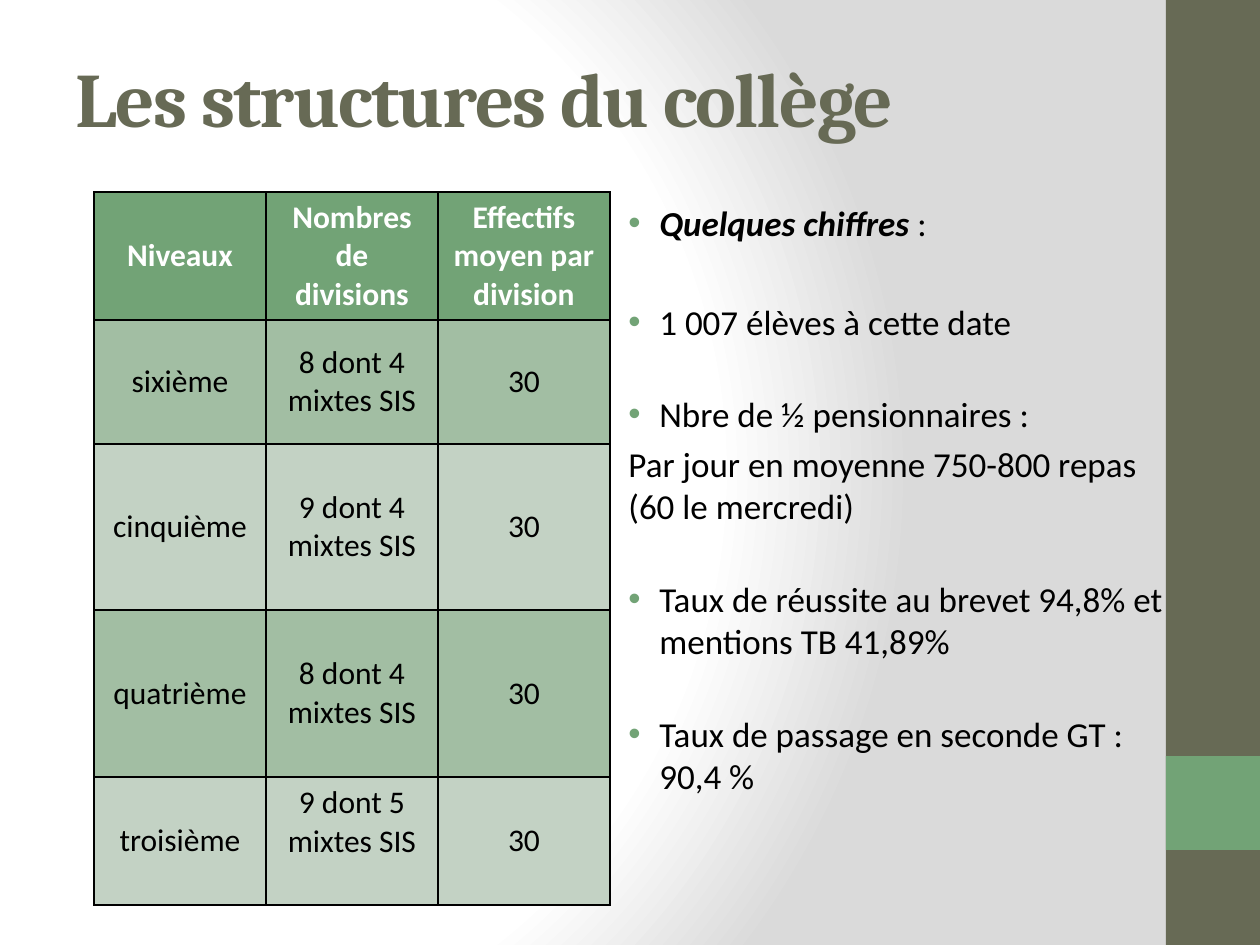
from lxml import etree
from pptx import Presentation, util as u
from pptx.dml.color import RGBColor
from pptx.enum import shapes, text
from pptx.oxml import parse_xml
from pptx.oxml.ns import nsdecls, qn

C = {"olive": "676A55", "green": "72A376", "band": "A2BEA3", "pale": "C3D2C4",
     "black": "000000", "white": "FFFFFF", "grey": "DADADA"}

TITLE = "Les structures du collège"
ROWS = [
    ("Niveaux", "Nombres de divisions", "Effectifs moyen par division"),
    ("sixième", "8 dont 4 mixtes SIS", "30"),
    ("cinquième", "9 dont 4 mixtes SIS", "30"),
    ("quatrième", "8 dont 4 mixtes SIS", "30"),
    ("troisième", "9 dont 5 mixtes SIS", "30"),
]
ROW_HEIGHTS = [128, 124, 166, 167, 128]
COL_WIDTH = 172

# runs (text, emphasised), bulleted, space before in points
FACTS = [
    ([("Quelques chiffres ", True), (":", False)], True, 0),
    ([("1 007 élèves à cette date", False)], True, 32.5),
    ([("Nbre de ½ pensionnaires :", False)], True, 29),
    ([("Par jour en moyenne 750-800 repas (60 le mercredi)", False)], False, 4.5),
    ([("Taux de réussite au brevet 94,8% et mentions TB 41,89%", False)], True, 29),
    ([("Taux de passage en seconde GT : 90,4 %", False)], True, 29),
]
SIDEBAR = [((1166, 0, 94, 945), "olive"), ((1166, 756, 94, 94), "green")]


def px(n):
    return u.Emu(round(n * 914400 / 126))


def rgb(name):
    return RGBColor.from_string(C[name])


def style(r, size, color, bold=False, italic=False, name="Calibri"):
    f = r.font
    f.name, f.size, f.bold, f.italic = name, u.Pt(size), bold, italic
    f.color.rgb = rgb(color)


def set_background(s):
    """Circular gradient, white at the left fading to grey."""
    s.background.fill.solid()
    solid = s.background._cSld.find(".//" + qn("a:solidFill"))
    stops = "".join(
        f'<a:gs pos="{pos * 1000}"><a:srgbClr val="{C[c]}"/></a:gs>'
        for pos, c in [(0, "white"), (75, "white"), (100, "grey")])
    solid.getparent().replace(solid, parse_xml(
        f'<a:gradFill {nsdecls("a")} rotWithShape="1"><a:gsLst>{stops}</a:gsLst>'
        '<a:path path="circle"><a:fillToRect l="20000" t="50000" r="100000" b="50000"/>'
        '</a:path></a:gradFill>'))


def set_borders(cell):
    tcPr = cell._tc.get_or_add_tcPr()
    for i, side in enumerate(("lnL", "lnR", "lnT", "lnB")):
        tcPr.insert(i, parse_xml(
            f'<a:{side} {nsdecls("a")} w="12700"><a:solidFill>'
            f'<a:srgbClr val="{C["black"]}"/></a:solidFill></a:{side}>'))


def set_indent(p, bulleted):
    pPr = p._p.get_or_add_pPr()
    pPr.set("marL", str(px(47 if bulleted else 16)))
    pPr.set("indent", str(-px(31) if bulleted else 0))
    if bulleted:
        color = etree.SubElement(pPr, qn("a:buClr"))
        etree.SubElement(color, qn("a:srgbClr"), val=C["green"])
        etree.SubElement(pPr, qn("a:buFont"), typeface="Arial")
        etree.SubElement(pPr, qn("a:buChar"), char="•")


def add_sidebar(s):
    for box, color in SIDEBAR:
        sp = s.shapes.add_shape(shapes.MSO_SHAPE.RECTANGLE, *map(px, box))
        sp.shadow.inherit = False
        sp.fill.solid()
        sp.fill.fore_color.rgb = rgb(color)
        sp.line.fill.background()


def add_title(s):
    sp = s.shapes.title
    sp.left, sp.top, sp.width, sp.height = map(px, (63, 38, 1050, 117))
    tf = sp.text_frame
    tf.text = TITLE
    tf.vertical_anchor = text.MSO_ANCHOR.MIDDLE
    p = tf.paragraphs[0]
    p.alignment = text.PP_ALIGN.LEFT
    style(p.runs[0], 44, "olive", bold=True, name="Cambria")
    p.runs[0].font._element.set("spc", "-100")


def add_facts(s):
    tf = s.shapes.add_textbox(*map(px, (600, 195, 586, 643))).text_frame
    tf.word_wrap = True
    for i, (runs, bulleted, before) in enumerate(FACTS):
        p = tf.add_paragraph() if i else tf.paragraphs[0]
        p.space_before = u.Pt(before)
        set_indent(p, bulleted)
        for words, strong in runs:
            r = p.add_run()
            r.text = words
            style(r, 20, "black", bold=strong, italic=strong)


def add_levels_table(s):
    n = len(ROWS[0])
    table = s.shapes.add_table(len(ROWS), n, px(94), px(192), px(COL_WIDTH * n),
                               px(sum(ROW_HEIGHTS))).table
    for col in table.columns:
        col.width = px(COL_WIDTH)
    for i, (row, height) in enumerate(zip(ROWS, ROW_HEIGHTS)):
        table.rows[i].height = px(height)
        fill = "green" if i == 0 else "band" if i % 2 else "pale"
        for j, words in enumerate(row):
            cell = table.cell(i, j)
            cell.text = words
            cell.vertical_anchor = text.MSO_ANCHOR.MIDDLE
            cell.fill.solid()
            cell.fill.fore_color.rgb = rgb(fill)
            set_borders(cell)
            p = cell.text_frame.paragraphs[0]
            p.alignment = text.PP_ALIGN.CENTER
            style(p.runs[0], 18, "black" if i else "white", bold=i == 0)
    # the last count sits one line higher than its neighbours
    table.cell(len(ROWS) - 1, 1).margin_bottom = px(44)


def main():
    prs = Presentation()
    prs.slide_width, prs.slide_height = px(1260), px(945)
    s = prs.slides.add_slide(prs.slide_layouts[5])
    set_background(s)
    add_sidebar(s)
    add_title(s)
    add_facts(s)
    add_levels_table(s)
    prs.save("out.pptx")


if __name__ == "__main__":
    main()
